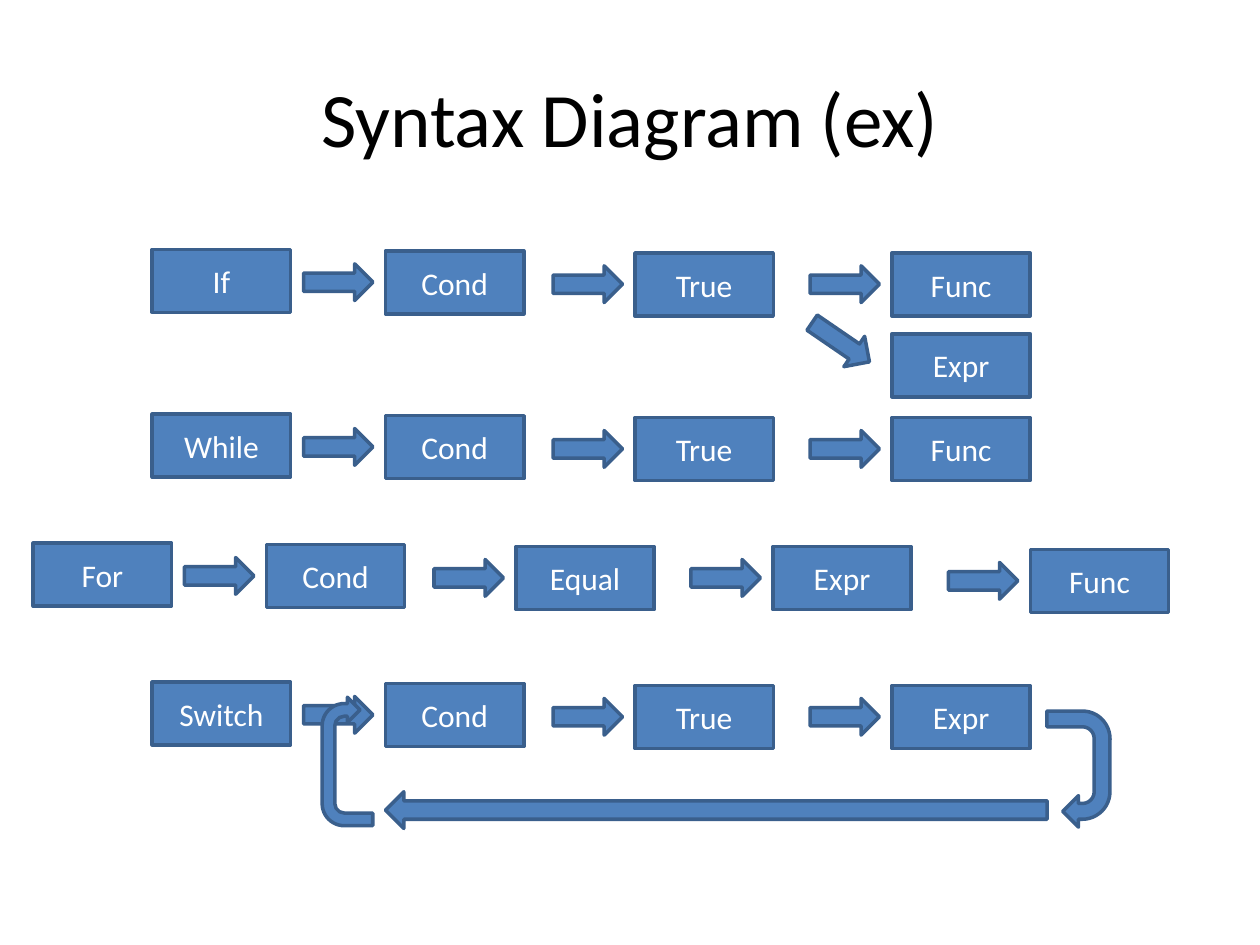
import pptx
import pptx.dml.color
import pptx.enum.shapes
import pptx.enum.text
import pptx.util

Cm = pptx.util.Cm
Pt = pptx.util.Pt
SHAPES = pptx.enum.shapes.MSO_SHAPE

BLUE = pptx.dml.color.RGBColor(0x4F, 0x81, 0xBD)
DARK_BLUE = pptx.dml.color.RGBColor(0x3A, 0x5F, 0x8C)
WHITE = pptx.dml.color.RGBColor(0xFF, 0xFF, 0xFF)
BLACK = pptx.dml.color.RGBColor(0x00, 0x00, 0x00)
FONT = "Calibri"

TOKEN_WIDTH, TOKEN_HEIGHT = 2.79, 1.27
ARROW_WIDTH, ARROW_HEIGHT = 1.4, 0.74
ARROW_LEAD, ARROW_DROP = 1.65, 0.26
STEPS = [(0, 0), (4.7, 0.03), (9.73, 0.07), (14.91, 0.07), (20.1, 0.13)]


def add_block(slide, preset, left, top, width, height, rotation=0):
    """Add a blue outlined shape, measured in centimetres."""
    block = slide.shapes.add_shape(preset, Cm(left), Cm(top), Cm(width), Cm(height))
    block.rotation = rotation
    block.shadow.inherit = False
    block.fill.solid()
    block.fill.fore_color.rgb = BLUE
    block.line.color.rgb = DARK_BLUE
    block.line.width = Pt(2)
    return block


def write(frame, text, size, color):
    """Write one centred run in the middle of a text frame."""
    frame.word_wrap = True
    frame.vertical_anchor = pptx.enum.text.MSO_ANCHOR.MIDDLE
    paragraph = frame.paragraphs[0]
    paragraph.alignment = pptx.enum.text.PP_ALIGN.CENTER
    run = paragraph.add_run()
    run.text = text
    run.font.name = FONT
    run.font.size = Pt(size)
    run.font.color.rgb = color


def add_token(slide, word, left, top):
    """Add one labelled box of the diagram."""
    token = add_block(slide, SHAPES.RECTANGLE, left, top, TOKEN_WIDTH, TOKEN_HEIGHT)
    write(token.text_frame, word, 18, WHITE)


def add_arrow(slide, left, top, rotation=0):
    """Add one short arrow."""
    add_block(slide, SHAPES.RIGHT_ARROW, left, top, ARROW_WIDTH, ARROW_HEIGHT, rotation)


def add_statement(slide, words, left, top):
    """Add a row of tokens, each after the first led by an arrow."""
    for index, (word, (dx, dy)) in enumerate(zip(words, STEPS)):
        if index:
            add_arrow(slide, left + dx - ARROW_LEAD, top + dy + ARROW_DROP)
        add_token(slide, word, left + dx, top + dy)


def add_branch(slide, word, left, top):
    """Add the alternative ending below the last token of a statement."""
    add_arrow(slide, left + 13.18, top + 1.5, 34.4)
    add_token(slide, word, left + STEPS[3][0], top + 1.7)


def add_loop(slide, left, top):
    """Add the arrows that lead from the end of a statement back to its condition."""
    add_block(slide, SHAPES.U_TURN_ARROW, left + 17.5, top + 1.12, 2.34, 1.27, 90)
    add_block(slide, SHAPES.RIGHT_ARROW, left + STEPS[1][0], top + 2.21, 13.34, ARROW_HEIGHT, 180)
    add_block(slide, SHAPES.U_TURN_ARROW, left + 2.64, top + 1.09, 2.59, 1.02, 270)


def add_title(slide, text, left, top, width, height):
    """Place and fill the title placeholder."""
    title = slide.shapes.title
    title.left, title.top = Cm(left), Cm(top)
    title.width, title.height = Cm(width), Cm(height)
    write(title.text_frame, text, 44, BLACK)


def main():
    """Build the syntax diagram slide."""
    deck = pptx.Presentation()
    deck.slide_width, deck.slide_height = Cm(25.4), Cm(19.05)
    slide = deck.slides.add_slide(deck.slide_layouts[5])
    add_title(slide, "Syntax Diagram (ex)", 1.27, 0.76, 22.86, 3.18)
    margin = 3.07
    add_statement(slide, ["If", "Cond", "True", "Func"], margin, 5.03)
    add_branch(slide, "Expr", margin, 5.03)
    add_statement(slide, ["While", "Cond", "True", "Func"], margin, 8.35)
    add_statement(slide, ["For", "Cond", "Equal", "Expr", "Func"], 0.67, 10.95)
    add_statement(slide, ["Switch", "Cond", "True", "Expr"], margin, 13.75)
    add_loop(slide, margin, 13.75)
    deck.save("out.pptx")


if __name__ == "__main__":
    main()
